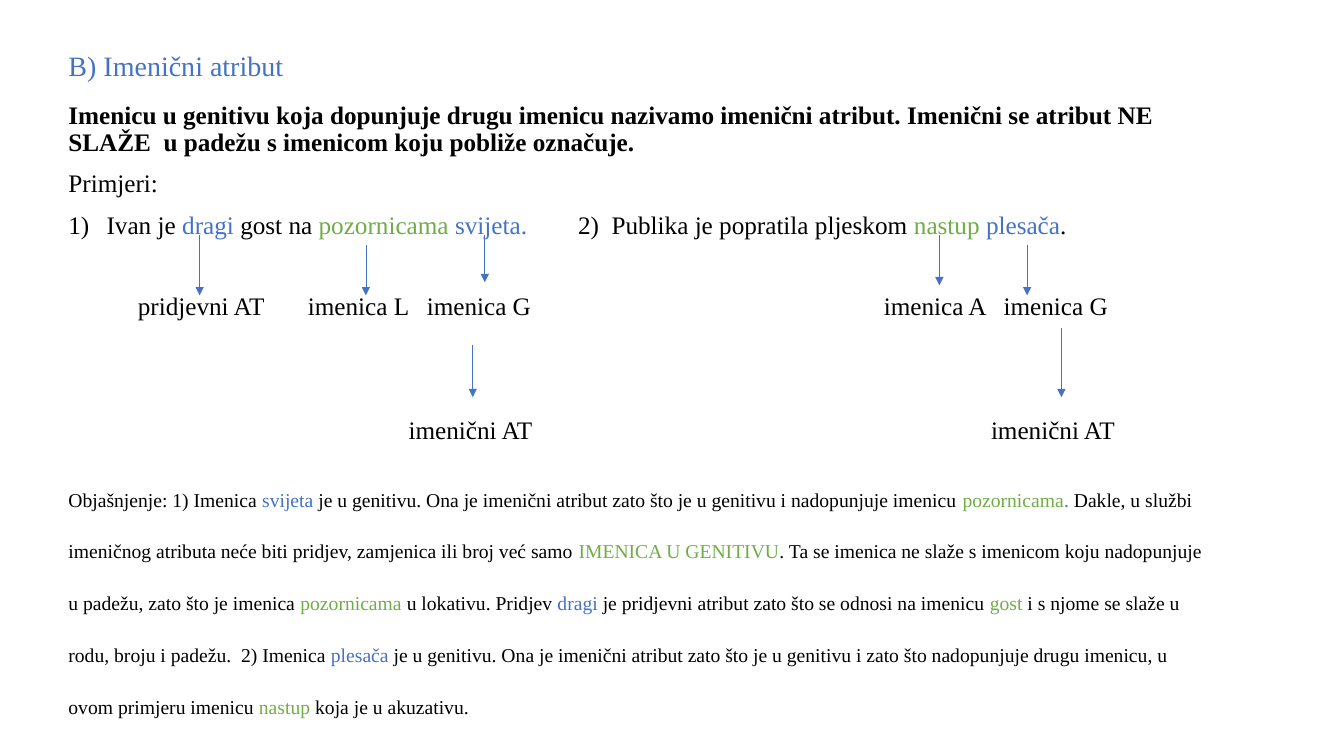
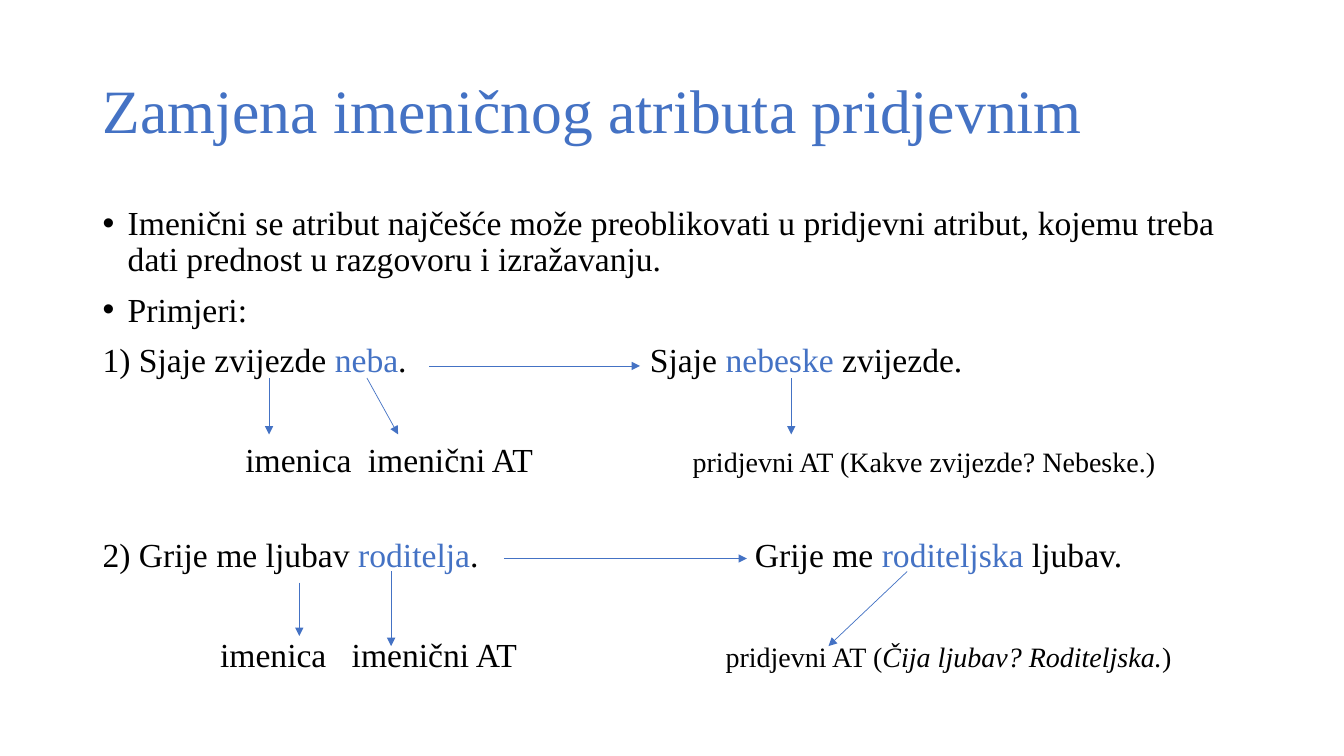
"""Builds two Croatian grammar slides about the noun attribute."""
import pptx
import pptx.dml.color
import pptx.enum.shapes
import pptx.enum.text
import pptx.oxml.ns
import pptx.util
from lxml import etree

Pt = pptx.util.Pt
COLOURS = {"black": "000000", "blue": "4472C4", "green": "70AD47", "background": "FFFFFF"}
FONT = "Times New Roman"
TEXT_WIDTH = 828
TITLE_HEIGHT = 104.4
STYLES = {
    "plain": {},
    "bold": {"bold": True},
    "blue": {"colour": "blue"},
    "green": {"colour": "green"},
    "small": {"size": 20},
    "small italic": {"size": 20, "italic": True},
}


def fill_paragraph(paragraph, runs, size, before=10, spacing=0.9, tabs=(), bullet=False):
    paragraph.line_spacing = spacing
    paragraph.space_before = Pt(before)
    for text, style_name in runs:
        style = STYLES[style_name]
        run = paragraph.add_run()
        run.text = text
        run.font.name = FONT
        run.font.size = Pt(style.get("size", size))
        run.font.bold = style.get("bold", False)
        run.font.italic = style.get("italic", False)
        colour = COLOURS[style.get("colour", "black")]
        run.font.color.rgb = pptx.dml.color.RGBColor.from_string(colour)
    properties = paragraph._p.get_or_add_pPr()
    if bullet:
        properties.set("marL", str(Pt(18)))
        properties.set("indent", str(Pt(-18)))
        etree.SubElement(properties, pptx.oxml.ns.qn("a:buFont"), typeface="Arial")
        etree.SubElement(properties, pptx.oxml.ns.qn("a:buChar"), char="•")
    if tabs:
        tab_list = etree.SubElement(properties, pptx.oxml.ns.qn("a:tabLst"))
        for position in tabs:
            etree.SubElement(tab_list, pptx.oxml.ns.qn("a:tab"), pos=str(Pt(position)), algn="l")


def add_text(slide, left, top, height, anchor, paragraphs):
    shape = slide.shapes.add_textbox(Pt(left), Pt(top), Pt(TEXT_WIDTH), Pt(height))
    text_frame = shape.text_frame
    text_frame.word_wrap = True
    text_frame.vertical_anchor = anchor
    for index, content in enumerate(paragraphs):
        paragraph = text_frame.add_paragraph() if index else text_frame.paragraphs[0]
        fill_paragraph(paragraph, **content)


noun_attribute = {
    "left": 41.8,
    "title": "B) Imenični atribut",
    "title_size": 20,
    "title_top": -4.3,
    "body_top": 69.8,
    "body_height": 453.6,
    "paragraphs": [
        {"size": 18, "runs": [
            ("Imenicu u genitivu koja dopunjuje drugu imenicu nazivamo imenični atribut. "
             "Imenični se atribut NE SLAŽE  u padežu s imenicom koju pobliže označuje.", "bold")]},
        {"size": 18, "runs": [("Primjeri:", "plain")]},
        {"size": 18, "tabs": (27.3, 364), "runs": [
            ("1)\tIvan je ", "plain"), ("dragi", "blue"), (" gost na", "plain"),
            (" pozornicama ", "green"), ("svijeta.", "blue"),
            ("\t2)  Publika je popratila pljeskom ", "plain"),
            ("nastup ", "green"), ("plesača", "blue"), (".", "plain")]},
        {"size": 18, "before": 39, "tabs": (49.6, 171, 256, 582.5, 668), "runs": [
            ("\tpridjevni AT\timenica L\timenica G\timenica A\timenica G", "plain")]},
        {"size": 18, "before": 69, "tabs": (243, 659), "runs": [
            ("\timenični AT\timenični AT", "plain")]},
        {"size": 14, "spacing": 2.2, "runs": [
            ("Objašnjenje: 1) Imenica ", "plain"), ("svijeta", "blue"),
            (" je u genitivu. Ona je imenični atribut zato što je u genitivu "
             "i nadopunjuje imenicu ", "plain"),
            ("pozornicama", "green"), (". ", "blue"),
            ("Dakle, u službi imeničnog atributa neće biti pridjev, zamjenica "
             "ili broj već samo ", "plain"),
            ("IMENICA U GENITIVU", "green"),
            (". Ta se imenica ne slaže s imenicom koju nadopunjuje u padežu, "
             "zato što je imenica ", "plain"),
            ("pozornicama", "green"), (" u lokativu. Pridjev ", "plain"), ("dragi ", "blue"),
            ("je pridjevni atribut zato što se odnosi na imenicu ", "plain"), ("gost", "green"),
            (" i s njome se slaže u rodu, broju i padežu.  2) Imenica ", "plain"),
            ("plesača ", "blue"),
            ("je u genitivu. Ona je imenični atribut zato što je u genitivu i zato što "
             "nadopunjuje drugu imenicu, u ovom primjeru imenicu ", "plain"),
            ("nastup ", "green"), ("koja je u akuzativu.", "plain")]},
    ],
    "arrows": [
        (142.6, 167.8, 142.6, 211),
        (261.4, 175, 261.4, 211),
        (346.3, 167.8, 346.3, 201.6),
        (337.7, 246.2, 337.7, 283.7),
        (671, 167.8, 671, 203.8),
        (733.7, 175, 733.7, 211),
        (758.2, 234, 758.2, 283.7),
    ],
}

attribute_replacement = {
    "left": 66.2,
    "title": "Zamjena imeničnog atributa pridjevnim",
    "title_size": 44,
    "title_top": 28.8,
    "body_top": 144,
    "body_height": 373,
    "paragraphs": [
        {"size": 24, "bullet": True, "runs": [
            ("Imenični se atribut najčešće može preoblikovati u pridjevni atribut, "
             "kojemu treba dati prednost u razgovoru i izražavanju.", "plain")]},
        {"size": 24, "bullet": True, "runs": [("Primjeri:", "plain")]},
        {"size": 24, "tabs": (391,), "runs": [
            ("1) Sjaje zvijezde ", "plain"), ("neba", "blue"), (".\tSjaje ", "plain"),
            ("nebeske", "blue"), (" zvijezde.", "plain")]},
        {"size": 24, "before": 45.5, "tabs": (102, 189.5, 421.5), "runs": [
            ("\timenica\timenični AT\t", "plain"),
            ("pridjevni AT (Kakve zvijezde? Nebeske.)", "small")]},
        {"size": 24, "before": 42, "tabs": (466,), "runs": [
            ("2) Grije me ljubav ", "plain"), ("roditelja", "blue"), (".\tGrije me ", "plain"),
            ("roditeljska", "blue"), (" ljubav.", "plain")]},
        {"size": 24, "before": 45.5, "tabs": (84, 178, 445), "runs": [
            ("\timenica\timenični AT\t", "plain"), ("pridjevni AT (", "small"),
            ("Čija ljubav? Roditeljska.", "small italic"), (")", "small")]},
    ],
    "arrows": [
        (192.2, 270, 192.2, 310.3),
        (262.1, 270, 284.4, 310.3),
        (306.7, 261.4, 457.2, 261.4),
        (565.2, 270, 565.2, 310.3),
        (360, 398.9, 533.5, 398.9),
        (213.8, 416.2, 213.8, 454.3),
        (279.4, 408.2, 279.4, 461.5),
        (648, 408.2, 591.8, 461.5),
    ],
}

presentation = pptx.Presentation()
presentation.slide_width = Pt(960)
presentation.slide_height = Pt(540)

for content in (noun_attribute, attribute_replacement):
    slide = presentation.slides.add_slide(presentation.slide_layouts[6])
    slide.background.fill.solid()
    slide.background.fill.fore_color.rgb = pptx.dml.color.RGBColor.from_string(COLOURS["background"])
    title = {"size": content["title_size"], "before": 0, "runs": [(content["title"], "blue")]}
    add_text(slide, content["left"], content["title_top"], TITLE_HEIGHT,
             pptx.enum.text.MSO_ANCHOR.MIDDLE, [title])
    add_text(slide, content["left"], content["body_top"], content["body_height"],
             pptx.enum.text.MSO_ANCHOR.TOP, content["paragraphs"])
    for arrow in content["arrows"]:
        connector = slide.shapes.add_connector(
            pptx.enum.shapes.MSO_CONNECTOR.STRAIGHT, *[Pt(value) for value in arrow])
        connector.line.width = Pt(0.5)
        connector.line.color.rgb = pptx.dml.color.RGBColor.from_string(COLOURS["blue"])
        line = connector.line._get_or_add_ln()
        etree.SubElement(line, pptx.oxml.ns.qn("a:tailEnd"), type="triangle")
        etree.SubElement(connector._element.spPr, pptx.oxml.ns.qn("a:effectLst"))

presentation.save("out.pptx")
